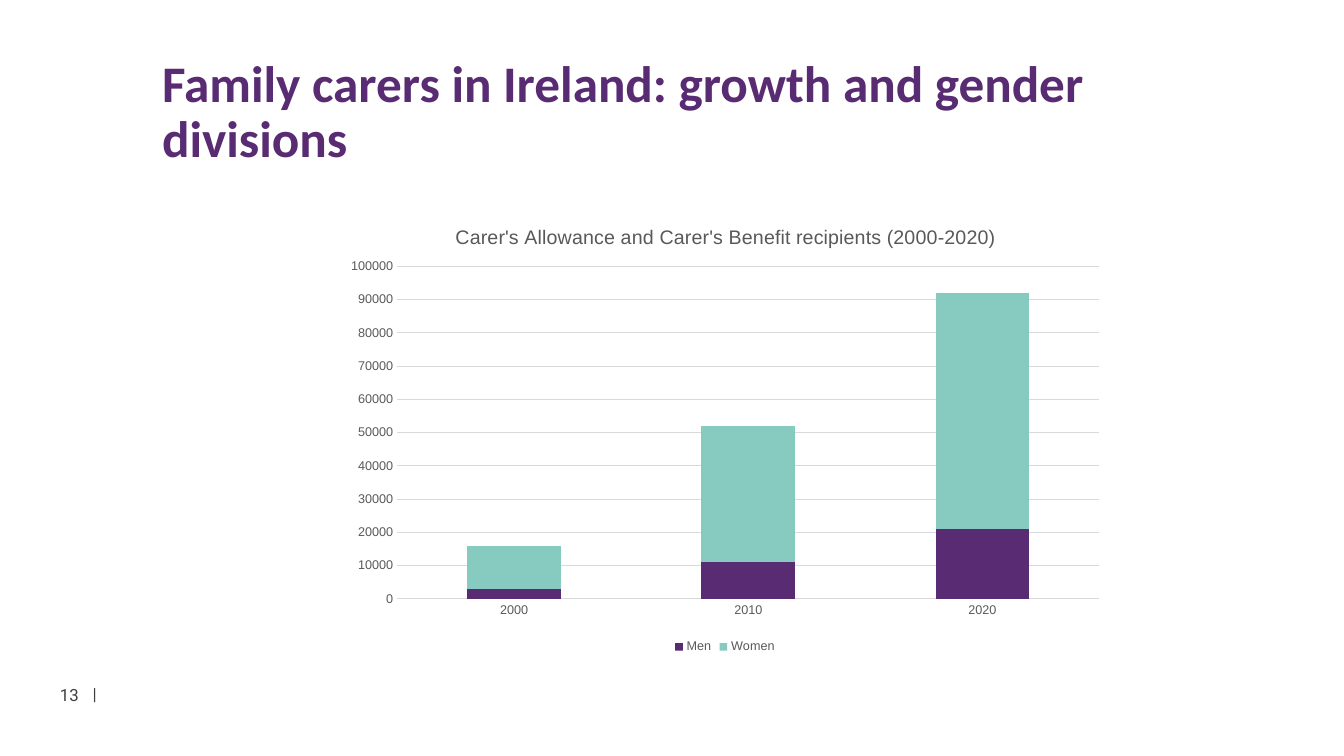
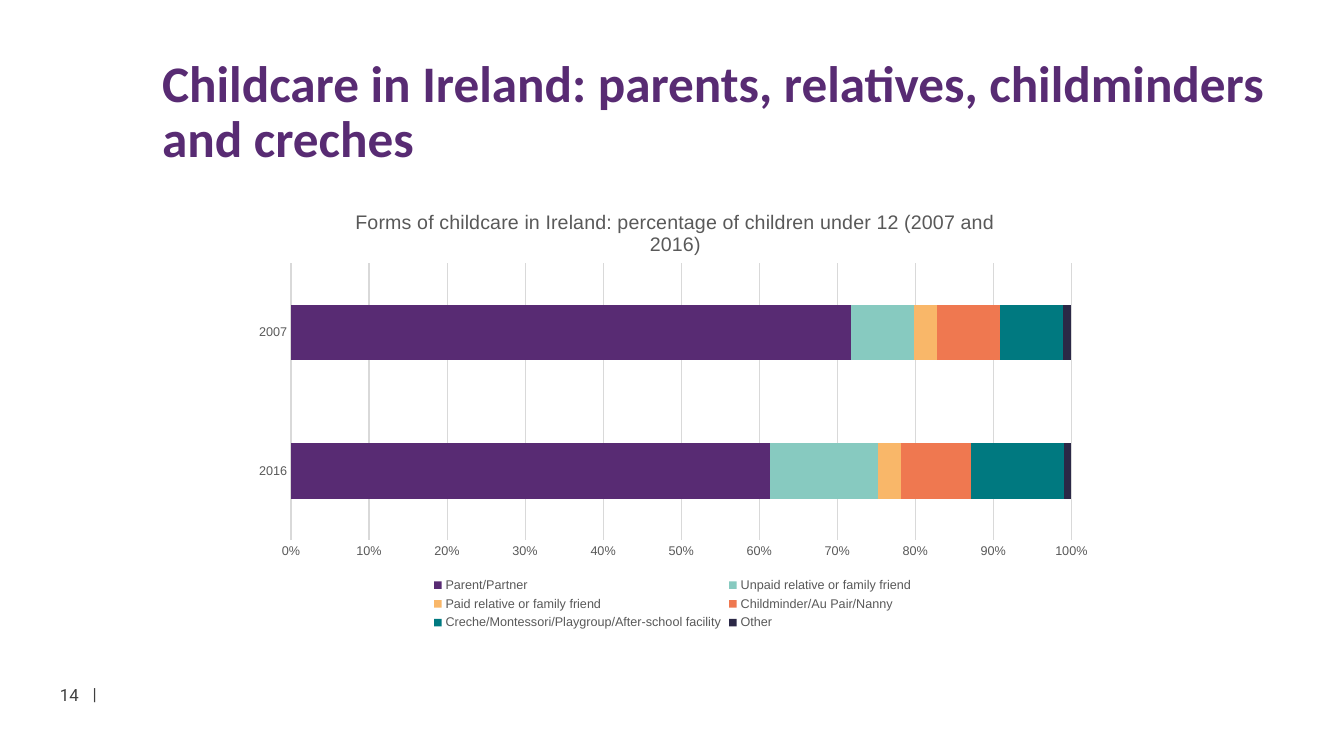
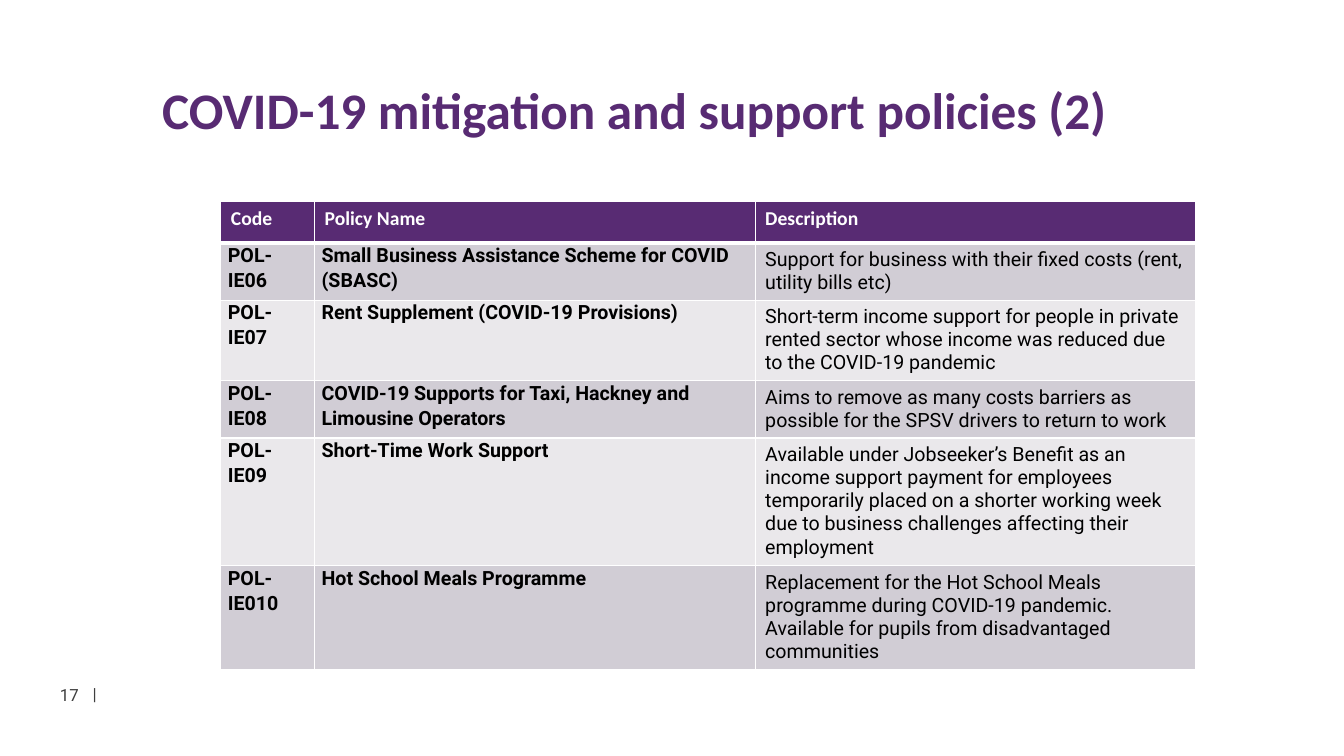
from dataclasses import dataclass
from typing import Any

from lxml import etree
from pptx import Presentation
from pptx.chart.chart import Chart
from pptx.chart.data import CategoryChartData
from pptx.dml.color import RGBColor
from pptx.enum.chart import XL_CHART_TYPE, XL_LEGEND_POSITION, XL_TICK_MARK
from pptx.enum.text import MSO_ANCHOR, PP_ALIGN
from pptx.oxml.ns import qn
from pptx.slide import Slide
from pptx.table import _Cell
from pptx.util import Inches, Pt

COLUMN_STACKED = XL_CHART_TYPE.COLUMN_STACKED
BAR_STACKED_100 = XL_CHART_TYPE.BAR_STACKED_100
LEGEND_BOTTOM = XL_LEGEND_POSITION.BOTTOM
NO_TICK = XL_TICK_MARK.NONE
TOP, MIDDLE = MSO_ANCHOR.TOP, MSO_ANCHOR.MIDDLE
LEFT, RIGHT = PP_ALIGN.LEFT, PP_ALIGN.RIGHT

Box = tuple[float, float, float, float]


@dataclass(frozen=True)
class Theme:
    purple: str = "582B73"
    mint: str = "87CAC0"
    amber: str = "F9B769"
    coral: str = "EF7850"
    teal: str = "007980"
    navy: str = "2B2846"
    white: str = "FFFFFF"
    black: str = "000000"
    footer_grey: str = "3F3F3F"
    chart_grey: str = "595959"
    grid_grey: str = "D9D9D9"
    bands: tuple[str, str] = ("D1CDD5", "EAE8EB")
    heading_font: str = "Calibri"
    body_font: str = "Roboto"
    chart_font: str = "Arial"
    title_size: float = 36.6
    footer_size: float = 12
    table_size: float = 14
    chart_title_size: float = 14
    chart_size: float = 9


THEME = Theme()


@dataclass(frozen=True)
class TextStyle:
    font: str
    size: float
    color: str
    bold: bool = False


TITLE = TextStyle(THEME.heading_font, THEME.title_size, THEME.purple, True)
FOOTER = TextStyle(THEME.body_font, THEME.footer_size, THEME.footer_grey)
CHART_TITLE = TextStyle(THEME.chart_font, THEME.chart_title_size, THEME.chart_grey)
CHART_LABEL = TextStyle(THEME.chart_font, THEME.chart_size, THEME.chart_grey)
TABLE_HEAD = TextStyle(THEME.heading_font, THEME.table_size, THEME.white, True)
TABLE_KEY = TextStyle(THEME.body_font, THEME.table_size, THEME.black, True)
TABLE_BODY = TextStyle(THEME.body_font, THEME.table_size, THEME.black)


@dataclass(frozen=True)
class Series:
    name: str
    values: tuple[int, ...]
    color: str


@dataclass(frozen=True)
class StackedChart:
    kind: Any
    box: Box
    plot: Box  # inner plot area as fractions of the chart
    title: str
    title_at: tuple[float, float]
    categories: tuple[str, ...]
    series: tuple[Series, ...]
    axis: dict[str, float]
    number_format: str


@dataclass(frozen=True)
class Policy:
    code: str
    name: str
    description: str


# Content
CARERS = StackedChart(
    COLUMN_STACKED, (3.32, 2.01, 7.74, 4.52), (0.08, 0.14, 0.9, 0.73),
    "Carer's Allowance and Carer's Benefit recipients (2000-2020)", (0.15, 0.04),
    ("2000", "2010", "2020"),
    (Series("Men", (3000, 11000, 21000), THEME.purple),
     Series("Women", (13000, 41000, 71000), THEME.mint)),
    {"minimum_scale": 0, "maximum_scale": 100000, "major_unit": 10000}, "General",
)
CHILDCARE = StackedChart(
    BAR_STACKED_100, (2.37, 1.86, 8.6, 4.43), (0.06, 0.17, 0.9, 0.62),
    "Forms of childcare in Ireland: percentage of children under 12 (2007 and 2016)",
    (0.13, 0.04),
    ("2016", "2007"),
    (Series("Parent/Partner", (62, 71), THEME.purple),
     Series("Unpaid relative or family friend", (14, 8), THEME.mint),
     Series("Paid relative or family friend", (3, 3), THEME.amber),
     Series("Childminder/Au Pair/Nanny", (9, 8), THEME.coral),
     Series("Creche/Montessori/Playgroup/After-school facility", (12, 8), THEME.teal),
     Series("Other", (1, 1), THEME.navy)),
    {"minimum_scale": 0, "maximum_scale": 1, "major_unit": 0.1}, "0%",
)
POLICY_HEADINGS = ("Code", "Policy Name", "Description")
POLICIES = (
    Policy("POL-IE06", "Small Business Assistance Scheme for COVID (SBASC)",
           "Support for business with their fixed costs (rent, utility bills etc)"),
    Policy("POL-IE07", "Rent Supplement (COVID-19 Provisions)",
           "Short-term income support for people in private rented sector whose income "
           "was reduced due to the COVID-19 pandemic"),
    Policy("POL-IE08", "COVID-19 Supports for Taxi, Hackney and Limousine Operators",
           "Aims to remove as many costs barriers as possible for the SPSV drivers to "
           "return to work"),
    Policy("POL-IE09", "Short-Time Work Support",
           "Available under Jobseeker’s Benefit as an income support payment for "
           "employees temporarily placed on a shorter working week due to business "
           "challenges affecting their employment"),
    Policy("POL-IE010", "Hot School Meals Programme",
           "Replacement for the Hot School Meals programme during COVID-19 pandemic. "
           "Available for pupils from disadvantaged communities"),
)


# Shared formatting
def apply(target: Any, values: dict[str, Any]) -> None:
    for name, value in values.items():
        setattr(target, name, value)


def style_font(font: Any, style: TextStyle) -> None:
    apply(font, {"name": style.font, "size": Pt(style.size), "bold": style.bold})
    font.color.rgb = RGBColor.from_string(style.color)


def style_line(line: Any, color: str, width: float) -> None:
    line.color.rgb = RGBColor.from_string(color)
    line.width = Pt(width)


def add_text(slide: Slide, box: Box, text: str, style: TextStyle, align: Any = LEFT,
             anchor: Any = MIDDLE, wrap: bool = True, spacing: float = 1.0) -> None:
    frame = slide.shapes.add_textbox(*map(Inches, box)).text_frame
    apply(frame, {"word_wrap": wrap, "vertical_anchor": anchor})
    paragraph = frame.paragraphs[0]
    apply(paragraph, {"alignment": align, "line_spacing": spacing})
    run = paragraph.add_run()
    run.text = text
    style_font(run.font, style)


def add_page(prs: Any, title: str, number: int) -> Slide:
    slide = prs.slides.add_slide(prs.slide_layouts[6])
    add_text(slide, (1.51, 0.39, 11.14, 1.47), title, TITLE, spacing=0.9)
    add_text(slide, (0.35, 6.72, 0.53, 0.34), str(number), FOOTER, align=RIGHT)
    add_text(slide, (0.82, 6.73, 0.24, 0.3), "|", FOOTER, anchor=TOP, wrap=False)
    return slide


# Charts
def set_layout(parent: Any, values: dict[str, Any]) -> None:
    """Place a chart part by fractions of the chart area."""
    layout = parent.find(qn("c:layout"))
    if layout is None:
        layout = etree.Element(qn("c:layout"))
        text = parent.find(qn("c:tx"))
        parent.insert(0 if text is None else 1, layout)
    manual = etree.SubElement(layout, qn("c:manualLayout"))
    for tag, value in values.items():
        etree.SubElement(manual, qn(f"c:{tag}")).set("val", str(value))


def style_axes(chart: Chart, content: StackedChart) -> None:
    for axis in (chart.category_axis, chart.value_axis):
        apply(axis, {"major_tick_mark": NO_TICK, "minor_tick_mark": NO_TICK})
        style_font(axis.tick_labels.font, CHART_LABEL)
    style_line(chart.category_axis.format.line, THEME.grid_grey, 0.75)
    chart.category_axis.has_major_gridlines = False
    values = chart.value_axis
    apply(values, content.axis)
    values.format.line.fill.background()
    style_line(values.major_gridlines.format.line, THEME.grid_grey, 0.75)
    apply(values.tick_labels, {"number_format": content.number_format,
                               "number_format_is_linked": False})


def add_stacked_chart(slide: Slide, content: StackedChart) -> None:
    data = CategoryChartData()
    data.categories = content.categories
    for series in content.series:
        data.add_series(series.name, series.values)
    chart = slide.shapes.add_chart(content.kind, *map(Inches, content.box), data).chart
    style_font(chart.font, CHART_LABEL)

    apply(chart, {"has_title": True, "has_legend": True})
    title_run = chart.chart_title.text_frame.paragraphs[0].add_run()
    title_run.text = content.title
    style_font(title_run.font, CHART_TITLE)
    apply(chart.legend, {"position": LEGEND_BOTTOM, "include_in_layout": False})
    style_font(chart.legend.font, CHART_LABEL)

    style_axes(chart, content)
    plot = chart.plots[0]
    apply(plot, {"gap_width": 150, "overlap": 100, "vary_by_categories": False})
    for bar, series in zip(plot.series, content.series):
        bar.format.fill.solid()
        bar.format.fill.fore_color.rgb = RGBColor.from_string(series.color)

    x, y, width, height = content.plot
    set_layout(chart.element.chart.plotArea, {
        "layoutTarget": "inner", "xMode": "edge", "yMode": "edge",
        "x": x, "y": y, "w": width, "h": height})
    title_x, title_y = content.title_at
    set_layout(chart.element.chart.find(qn("c:title")), {
        "xMode": "edge", "yMode": "edge", "x": title_x, "y": title_y})


# Policy table
def set_borders(cell: _Cell, widths: dict[str, float]) -> None:
    properties = cell._tc.get_or_add_tcPr()
    for side, width in widths.items():
        line = etree.SubElement(properties, qn(f"a:ln{side}"), w=str(Pt(width)))
        fill = etree.SubElement(line, qn("a:solidFill"))
        etree.SubElement(fill, qn("a:srgbClr"), val=THEME.white)


def fill_cell(cell: _Cell, text: str, style: TextStyle, fill: str,
              borders: dict[str, float]) -> None:
    set_borders(cell, borders)
    cell.fill.solid()
    cell.fill.fore_color.rgb = RGBColor.from_string(fill)
    paragraph = cell.text_frame.paragraphs[0]
    if style is TABLE_KEY:
        apply(cell, {"margin_left": Inches(0.07), "margin_right": Inches(0.07),
                     "margin_top": 0, "margin_bottom": 0})
        apply(paragraph, {"line_spacing": 1.07, "space_after": Pt(8)})
    run = paragraph.add_run()
    run.text = text
    style_font(run.font, style)


def add_policy_table(slide: Slide) -> None:
    rows = [POLICY_HEADINGS] + [(p.code, p.name, p.description) for p in POLICIES]
    widths, row_height = (0.93, 4.37, 4.37), 0.41
    table = slide.shapes.add_table(
        len(rows), len(widths), Inches(2.19), Inches(2),
        Inches(sum(widths)), Inches(row_height * len(rows))).table
    table.horz_banding = False
    for column, width in zip(table.columns, widths):
        column.width = Inches(width)
    for r, texts in enumerate(rows):
        table.rows[r].height = Inches(row_height)
        fill = THEME.bands[(r - 1) % 2] if r else THEME.purple
        styles = (TABLE_KEY, TABLE_KEY, TABLE_BODY) if r else (TABLE_HEAD,) * 3
        borders = {"L": 1, "R": 1, "T": 3 if r == 1 else 1, "B": 1 if r else 3}
        for c, (text, style) in enumerate(zip(texts, styles)):
            fill_cell(table.cell(r, c), text, style, fill, borders)


def main() -> None:
    prs = Presentation()
    apply(prs, {"slide_width": Inches(13.33), "slide_height": Inches(7.5)})

    carers = add_page(prs, "Family carers in Ireland: growth and gender divisions", 13)
    add_stacked_chart(carers, CARERS)

    childcare = add_page(
        prs, "Childcare in Ireland: parents, relatives, childminders and creches", 14)
    add_stacked_chart(childcare, CHILDCARE)

    policies = add_page(prs, "COVID-19 mitigation and support policies (2)", 17)
    add_policy_table(policies)

    prs.save("out.pptx")


if __name__ == "__main__":
    main()
